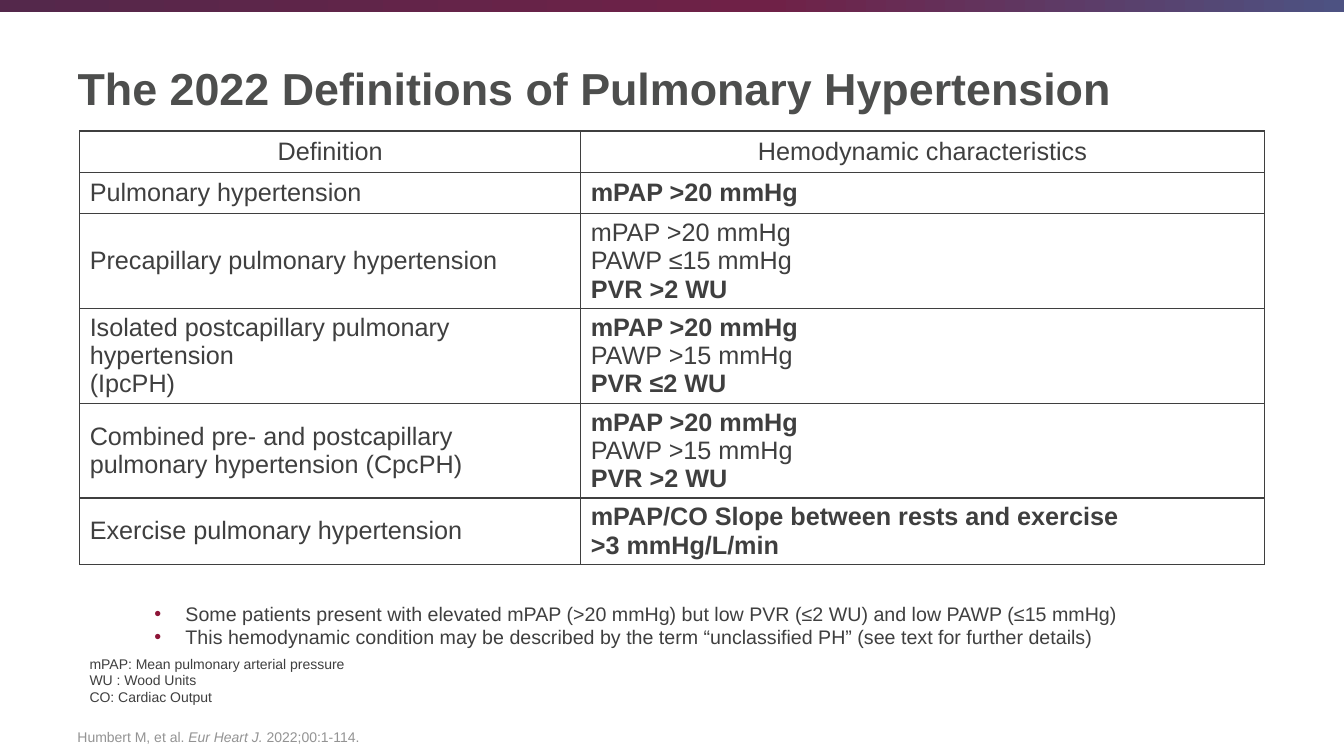
from copy import deepcopy
from dataclasses import dataclass

from lxml import etree
from pptx import Presentation
from pptx.dml.color import RGBColor
from pptx.enum.shapes import MSO_SHAPE
from pptx.enum.text import MSO_ANCHOR, MSO_AUTO_SIZE, PP_ALIGN
from pptx.oxml.ns import qn
from pptx.util import Pt

PX = 9144  # 100 px to the inch
RECT = MSO_SHAPE.RECTANGLE
LEFT, CENTER = PP_ALIGN.LEFT, PP_ALIGN.CENTER
TOP, MIDDLE, BOTTOM = MSO_ANCHOR.TOP, MSO_ANCHOR.MIDDLE, MSO_ANCHOR.BOTTOM


@dataclass(frozen=True)
class Theme:
    font: str = "Arial"
    title: str = "4D4E4D"
    text: str = "3F3F3F"
    muted: str = "939393"
    bullet: str = "8E1537"
    band: tuple = ((0, "54284B"), (57, "6F2147"), (100, "4D5282"))
    title_pt: int = 32
    cell_pt: int = 18
    list_pt: int = 14
    note_pt: int = 10


THEME = Theme()
COLS = (497, 678)
ROWS = (41, 41, 94, 94, 94, 66)
# A leading * marks a bold line.
CELLS = (
    (("Definition",), ("Hemodynamic characteristics",)),
    (("Pulmonary hypertension",), ("*mPAP >20 mmHg",)),
    (("Precapillary pulmonary hypertension",),
     ("mPAP >20 mmHg", "PAWP ≤15 mmHg", "*PVR >2 WU")),
    (("Isolated postcapillary pulmonary hypertension", "(IpcPH)"),
     ("*mPAP >20 mmHg", "PAWP >15 mmHg", "*PVR ≤2 WU")),
    (("Combined pre- and postcapillary pulmonary hypertension (CpcPH)",),
     ("*mPAP >20 mmHg", "PAWP >15 mmHg", "*PVR >2 WU")),
    (("Exercise pulmonary hypertension",),
     ("*mPAP/CO Slope between rests and exercise\v>3 mmHg/L/min",)),
)
POINTS = (
    "Some patients present with elevated mPAP (>20 mmHg) but low PVR (≤2 WU) and low PAWP (≤15 mmHg)",
    "This hemodynamic condition may be described by the term “unclassified PH” (see text for further details)",
)
TERMS = ("mPAP: Mean pulmonary arterial pressure", "WU : Wood Units", "CO: Cardiac Output")
SOURCE = (("Humbert M, et al. ", False), ("Eur Heart J. ", True), ("2022;00:1-114.", False))


def px(*sizes):
    return [size * PX for size in sizes]


def place(shape, *box):
    shape.left, shape.top, shape.width, shape.height = px(*box)


def style(para, size, color, bold=False, align=LEFT):
    para.alignment = align
    para.space_before = Pt(0)
    font = para.font
    font.name, font.size, font.bold = THEME.font, Pt(size), bold
    font.color.rgb = RGBColor.from_string(color)


def write(frame, lines, size, color, bold=False, align=LEFT):
    """Fill a frame with one paragraph a line; a leading * makes it bold."""
    for i, line in enumerate(lines):
        para = frame.add_paragraph() if i else frame.paragraphs[0]
        para.text = line.removeprefix("*")
        style(para, size, color, bold or line.startswith("*"), align)


def set_frame(frame, anchor):
    frame.word_wrap = True
    frame.auto_size = MSO_AUTO_SIZE.NONE
    frame.vertical_anchor = anchor


def add_band(slide):
    band = slide.shapes.add_shape(RECT, *px(0, 0, 1333, 12))
    band.shadow.inherit = False
    band.line.fill.background()
    band.fill.gradient()
    band.fill.gradient_angle = 0
    first = band.fill.gradient_stops[0]
    stops = band.fill._fill._gradFill.find(qn("a:gsLst"))
    stops.insert(1, deepcopy(stops[0]))
    for stop, (spot, color) in zip(band.fill.gradient_stops, THEME.band):
        stop.position = spot / 100
        stop.color.rgb = RGBColor.from_string(color)


def add_title(slide, text):
    title = slide.shapes.title
    place(title, 67, 22, 1175, 130)
    set_frame(title.text_frame, MIDDLE)
    write(title.text_frame, [text], THEME.title_pt, THEME.title, bold=True)


def add_edges(cell):
    props = cell._tc.get_or_add_tcPr()
    for side in "LRTB":
        edge = etree.SubElement(props, qn(f"a:ln{side}"), w=str(Pt(1)))
        fill = etree.SubElement(edge, qn("a:solidFill"))
        etree.SubElement(fill, qn("a:srgbClr"), val=THEME.text)


def add_grid(slide):
    box = px(79, 130, sum(COLS), sum(ROWS))
    table = slide.shapes.add_table(len(ROWS), len(COLS), *box).table
    table.first_row = table.horz_banding = False
    for col, width in zip(table.columns, COLS):
        col.width = width * PX
    for r, (row, height) in enumerate(zip(table.rows, ROWS)):
        row.height = height * PX
        for cell, lines in zip(row.cells, CELLS[r]):
            add_edges(cell)
            cell.fill.background()
            cell.vertical_anchor = MIDDLE
            write(cell.text_frame, lines, THEME.cell_pt, THEME.text,
                  align=LEFT if r else CENTER)


def add_bullet(para):
    props = para._p.get_or_add_pPr()
    props.set("marL", str(31 * PX))
    props.set("indent", str(-31 * PX))
    tint = etree.Element(qn("a:buClr"))
    etree.SubElement(tint, qn("a:srgbClr"), val=THEME.bullet)
    face = etree.Element(qn("a:buFont"), typeface=THEME.font)
    mark = etree.Element(qn("a:buChar"), char="•")
    fonts = props.find(qn("a:defRPr"))
    for part in (tint, face, mark):
        fonts.addprevious(part)


def add_points(slide):
    body = slide.placeholders[1]
    place(body, 143, 592, 1004, 57)
    set_frame(body.text_frame, TOP)
    write(body.text_frame, POINTS, THEME.list_pt, THEME.text)
    for para in body.text_frame.paragraphs:
        add_bullet(para)


def add_box(slide, box, anchor):
    frame = slide.shapes.add_textbox(*px(*box)).text_frame
    set_frame(frame, anchor)
    return frame


def add_source(slide):
    para = add_box(slide, (67, 713, 1175, 31), BOTTOM).paragraphs[0]
    for text, slant in SOURCE:
        run = para.add_run()
        run.text = text
        run.font.italic = slant
    style(para, THEME.note_pt, THEME.muted)


def main():
    deck = Presentation()
    deck.slide_width, deck.slide_height = px(1333, 750)
    slide = deck.slides.add_slide(deck.slide_layouts[1])
    add_band(slide)
    add_title(slide, "The 2022 Definitions of Pulmonary Hypertension")
    add_grid(slide)
    add_points(slide)
    add_source(slide)
    terms = add_box(slide, (79, 645, 287, 61), TOP)
    write(terms, TERMS, THEME.note_pt, THEME.text)
    deck.save("out.pptx")


if __name__ == "__main__":
    main()
